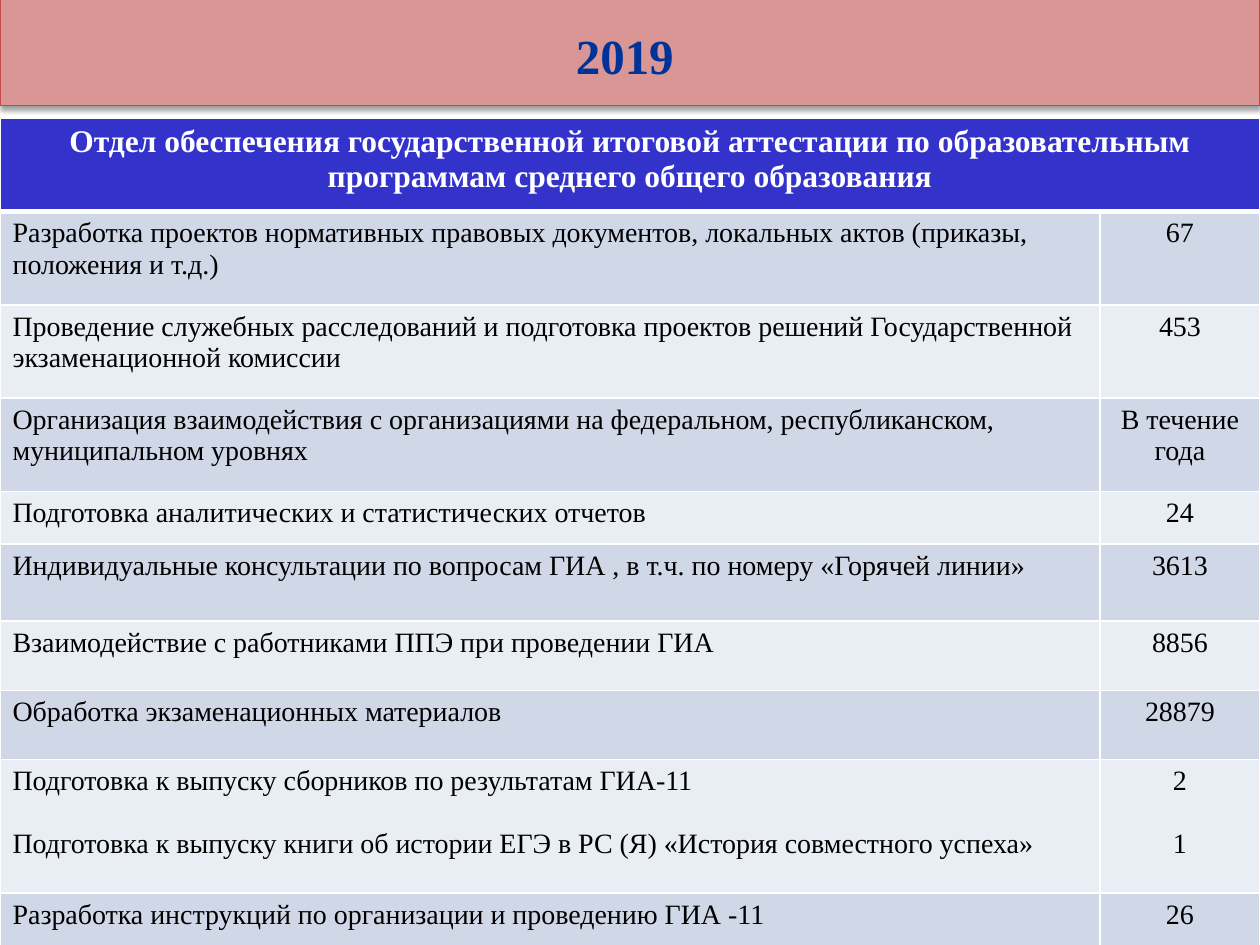
from lxml.etree import SubElement
from pptx import Presentation
from pptx.dml.color import RGBColor
from pptx.enum.shapes import MSO_SHAPE
from pptx.enum.text import MSO_ANCHOR, PP_ALIGN
from pptx.oxml.ns import qn
from pptx.util import Inches, Pt

FONT = "Times New Roman"
WHITE, BLACK = "FFFFFF", "000000"
BANDS = ("D0D8E8", "E9EDF4")
HEADING = ("Отдел обеспечения государственной итоговой аттестации "
           "по образовательным программам среднего общего образования")
HEADING_HEIGHT = 0.74
COLUMN_WIDTHS = (8.73, 1.27)
# Row height, activity, amount; a line break starts a spaced paragraph
ROWS = [
    (0.74, "Разработка проектов нормативных правовых документов, локальных актов "
           "(приказы, положения и т.д.)", "67"),
    (0.74, "Проведение служебных расследований и подготовка проектов решений "
           "Государственной экзаменационной комиссии", "453"),
    (0.74, "Организация взаимодействия с организациями на федеральном, "
           "республиканском, муниципальном уровнях", "В течение года"),
    (0.42, "Подготовка аналитических и статистических отчетов", "24"),
    (0.61, "Индивидуальные консультации по вопросам ГИА , в т.ч. по номеру "
           "«Горячей линии»", "3613"),
    (0.55, "Взаимодействие с работниками ППЭ при проведении ГИА", "8856"),
    (0.55, "Обработка экзаменационных материалов", "28879"),
    (1.06, "Подготовка к выпуску сборников по результатам ГИА-11\n"
           "Подготовка к выпуску книги об истории ЕГЭ в РС (Я) "
           "«История совместного успеха»", "2\n1"),
    (0.42, "Разработка инструкций по организации и проведению ГИА -11", "26"),
]


def rgb(color):
    return RGBColor.from_string(color)


def write(tf, text, size, color, bold=False, align=PP_ALIGN.LEFT):
    tf.text = text
    for i, p in enumerate(tf.paragraphs):
        p.alignment = align
        if i:
            p.space_before = Pt(18)
        for r in p.runs:
            r.font.name = FONT
            r.font.size = Pt(size)
            r.font.bold = bold
            r.font.color.rgb = rgb(color)


def add_color(parent, color):
    return SubElement(parent, qn("a:srgbClr"), val=color)


def add_shadow(shape, color, alpha, blur, dist):
    """Cast a shadow straight down; alpha in percent, lengths in points."""
    effects = SubElement(shape._element.spPr, qn("a:effectLst"))
    shadow = SubElement(effects, qn("a:outerShdw"), blurRad=str(Pt(blur)),
                        dist=str(Pt(dist)), dir="5400000", rotWithShape="0")
    SubElement(add_color(shadow, color), qn("a:alpha"), val=str(alpha * 1000))


def add_banner(s, text):
    sp = s.shapes.add_shape(MSO_SHAPE.RECTANGLE, Inches(0), Inches(-0.02),
                            Inches(10), Inches(0.86))
    sp.fill.solid()
    sp.fill.fore_color.rgb = rgb("D99694")
    sp.line.color.rgb = rgb("BF4C48")
    sp.line.width = Pt(0.75)
    add_shadow(sp, BLACK, 38, 3.1, 1.6)
    tf = sp.text_frame
    tf.vertical_anchor = MSO_ANCHOR.MIDDLE
    tf.margin_top = Inches(0.1)
    tf.margin_right = Inches(0.18)
    write(tf, text, 28, "003399", True, PP_ALIGN.CENTER)


def style_cell(cell, fill, top=1, bottom=1):
    """Fill the cell and give it white borders, widths in points."""
    tc_pr = cell._tc.get_or_add_tcPr()
    for side, width in (("L", 1), ("R", 1), ("T", top), ("B", bottom)):
        line = SubElement(tc_pr, qn(f"a:ln{side}"), w=str(Pt(width)))
        add_color(SubElement(line, qn("a:solidFill")), WHITE)
    cell.fill.solid()
    cell.fill.fore_color.rgb = rgb(fill)


def add_activity_table(s):
    heights = [HEADING_HEIGHT] + [height for height, _, _ in ROWS]
    table = s.shapes.add_table(len(heights), len(COLUMN_WIDTHS), Inches(0), Inches(0.94),
                               Inches(10), Inches(sum(heights))).table
    for column, width in zip(table.columns, COLUMN_WIDTHS):
        column.width = Inches(width)
    for row, height in zip(table.rows, heights):
        row.height = Inches(height)

    heading = table.cell(0, 0)
    heading.merge(table.cell(0, 1))
    for cell in table.rows[0].cells:
        style_cell(cell, "3333CC", bottom=3)
    write(heading.text_frame, HEADING, 18, WHITE, True, PP_ALIGN.CENTER)

    for i, (_, activity, amount) in enumerate(ROWS):
        columns = ((activity, PP_ALIGN.LEFT), (amount, PP_ALIGN.CENTER))
        for cell, (text, align) in zip(table.rows[i + 1].cells, columns):
            style_cell(cell, BANDS[i % 2], top=1 if i else 3)
            write(cell.text_frame, text, 16, BLACK, align=align)


def main():
    prs = Presentation()
    prs.slide_width, prs.slide_height = Inches(10), Inches(7.5)
    s = prs.slides.add_slide(prs.slide_layouts[6])
    add_banner(s, "2019")
    add_activity_table(s)
    prs.save("out.pptx")


if __name__ == "__main__":
    main()
